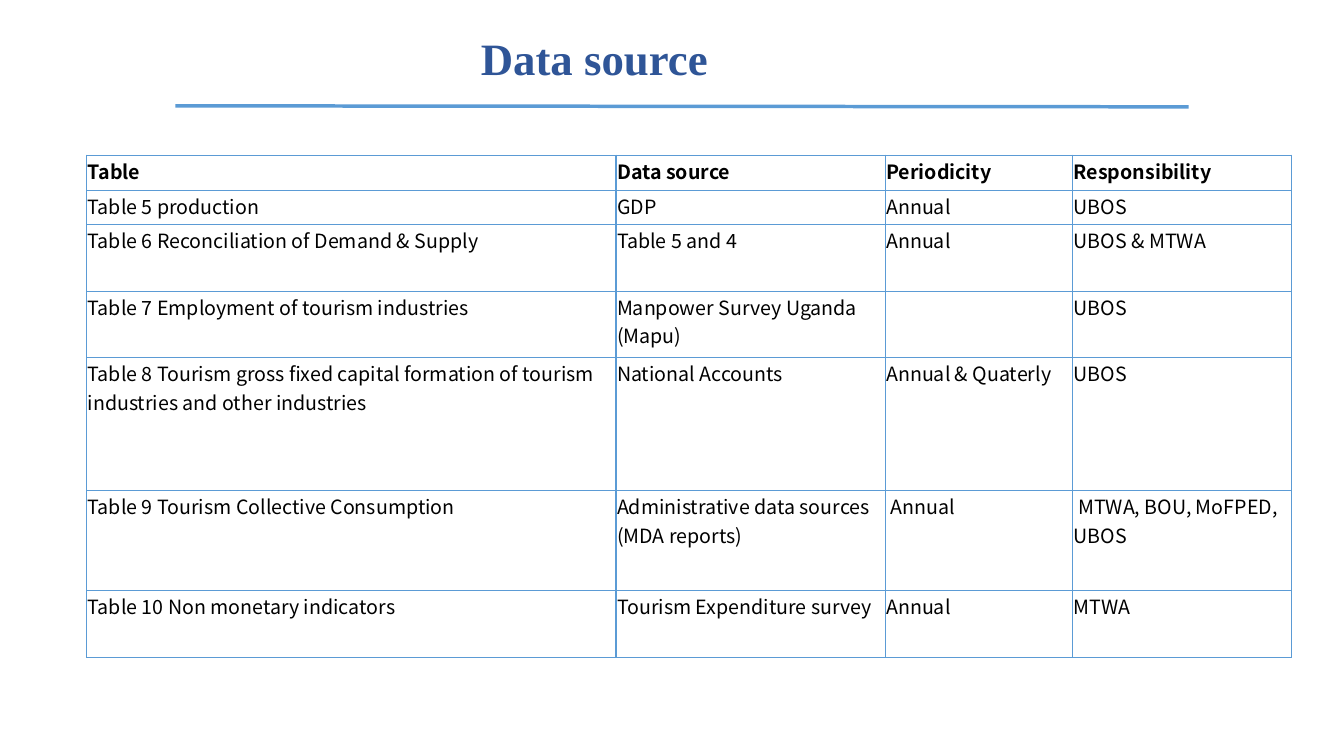
from dataclasses import dataclass

from lxml import etree
from pptx import Presentation
from pptx.dml.color import RGBColor
from pptx.enum.shapes import MSO_CONNECTOR
from pptx.enum.text import MSO_AUTO_SIZE, PP_ALIGN
from pptx.oxml.ns import qn
from pptx.util import Inches, Pt

STRAIGHT = MSO_CONNECTOR.STRAIGHT
GROW = MSO_AUTO_SIZE.SHAPE_TO_FIT_TEXT
CENTER = PP_ALIGN.CENTER


@dataclass(frozen=True)
class Theme:
    title_font: str = "Times New Roman"
    body_font: str = "Noto Sans CJK SC"
    title_size: float = 32
    body_size: float = 14
    rule_width: float = 2.5
    border_width: float = 1
    title_color: str = "2F5597"
    body_color: str = "000000"
    line_color: str = "5B9BD5"


THEME = Theme()

COLUMN_WIDTHS = [5.25, 2.67, 1.86, 2.17]
ROW_HEIGHTS = [0.35, 0.34, 0.66, 0.66, 1.32, 0.99, 0.66]
ROWS = [
    ["Table", "Data source", "Periodicity", "Responsibility"],
    ["Table 5 production", "GDP", "Annual", "UBOS"],
    ["Table 6 Reconciliation of Demand & Supply", "Table 5 and 4", "Annual", "UBOS & MTWA"],
    ["Table 7 Employment of tourism industries", "Manpower Survey Uganda (Mapu)", "", "UBOS"],
    ["Table 8 Tourism gross fixed capital formation of tourism industries and other industries",
     "National Accounts", "Annual & Quaterly", "UBOS"],
    ["Table 9 Tourism Collective Consumption", "Administrative data sources (MDA reports)",
     " Annual", " MTWA, BOU, MoFPED, UBOS"],
    ["Table 10 Non monetary indicators", "Tourism Expenditure survey", "Annual", "MTWA"],
]


def add_run(paragraph, text, font_name, size, color, bold):
    run = paragraph.add_run()
    run.text = text
    run.font.name = font_name
    run.font.size = Pt(size)
    run.font.bold = bold
    run.font.color.rgb = RGBColor.from_string(color)


def add_rule(slide, left, top, width, drop):
    """Draw the line under the title, falling by drop from left to right."""
    rule = slide.shapes.add_connector(
        STRAIGHT, Inches(left), Inches(top), Inches(left + width), Inches(top + drop))
    rule.line.color.rgb = RGBColor.from_string(THEME.line_color)
    rule.line.width = Pt(THEME.rule_width)
    etree.SubElement(rule.element.spPr, qn("a:effectLst"))


def add_title(slide, text, left, top, width, height):
    box = slide.shapes.add_textbox(Inches(left), Inches(top), Inches(width), Inches(height))
    frame = box.text_frame
    frame.word_wrap = True
    frame.auto_size = GROW
    paragraph = frame.paragraphs[0]
    paragraph.alignment = CENTER
    add_run(paragraph, text, THEME.title_font, THEME.title_size, THEME.title_color, True)


def add_borders(cell):
    properties = cell._tc.get_or_add_tcPr()
    for side in ("lnL", "lnR", "lnT", "lnB"):
        line = etree.SubElement(properties, qn(f"a:{side}"), w=str(Pt(THEME.border_width)))
        fill = etree.SubElement(line, qn("a:solidFill"))
        etree.SubElement(fill, qn("a:srgbClr"), val=THEME.line_color)


def fill_cell(cell, text, bold):
    cell.margin_left = cell.margin_right = cell.margin_top = Inches(0.01)
    cell.margin_bottom = 0
    add_borders(cell)
    cell.fill.background()
    if text:
        add_run(cell.text_frame.paragraphs[0], text, THEME.body_font,
                THEME.body_size, THEME.body_color, bold)


def add_source_table(slide, left, top):
    table = slide.shapes.add_table(
        len(ROWS), len(COLUMN_WIDTHS), Inches(left), Inches(top),
        Inches(sum(COLUMN_WIDTHS)), Inches(sum(ROW_HEIGHTS))).table
    table.horz_banding = False
    table.first_row = False
    for column, width in zip(table.columns, COLUMN_WIDTHS):
        column.width = Inches(width)
    for row_index, (row, height, texts) in enumerate(zip(table.rows, ROW_HEIGHTS, ROWS)):
        row.height = Inches(height)
        for cell, text in zip(row.cells, texts):
            fill_cell(cell, text, bold=row_index == 0)


def main():
    presentation = Presentation()
    presentation.slide_width = Inches(13.33)
    presentation.slide_height = Inches(7.5)
    slide = presentation.slides.add_slide(presentation.slide_layouts[6])
    add_rule(slide, 1.74, 1.05, 10.05, 0.01)
    add_title(slide, "Data source", 1.79, 0.26, 8.21, 0.64)
    add_source_table(slide, 0.86, 1.54)
    presentation.save("out.pptx")


if __name__ == "__main__":
    main()
